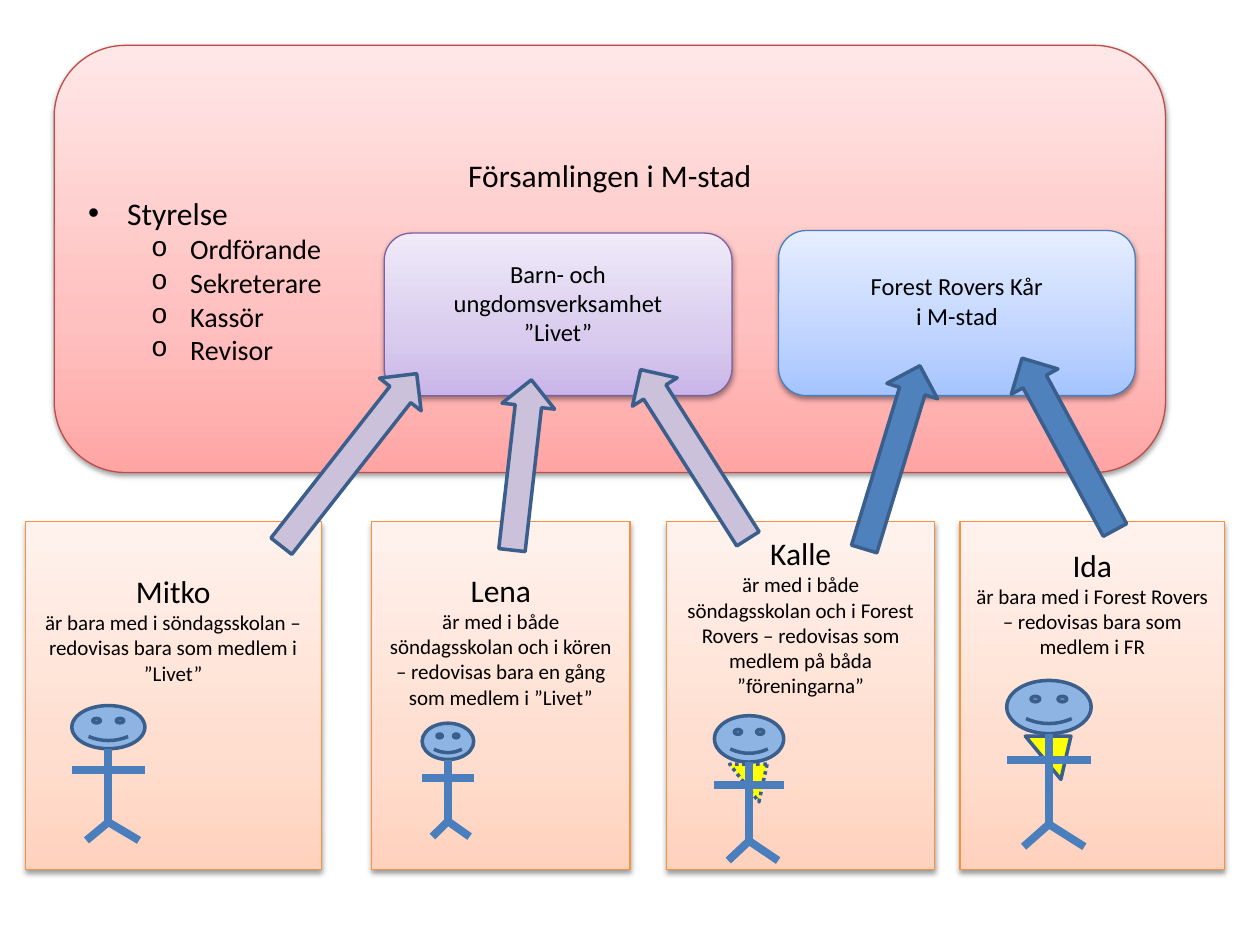
import copy
import pptx
import pptx.util
from lxml import etree
from pptx.dml.color import RGBColor
from pptx.enum.dml import MSO_LINE
from pptx.enum.shapes import MSO_CONNECTOR, MSO_SHAPE
from pptx.enum.text import MSO_ANCHOR, MSO_AUTO_SIZE, PP_ALIGN
from pptx.oxml.ns import qn

prs = pptx.Presentation()
prs.slide_width = pptx.util.Inches(10)
prs.slide_height = pptx.util.Inches(7.5)
U = prs.slide_width // 10  # the grid has 10 columns and 7.5 rows
s = prs.slides.add_slide(prs.slide_layouts[1])


def style(shape, line, width, fill=None):
    """Colour a shape or connector; three fill colours give a gradient with a shadow."""
    shape.line.color.rgb = RGBColor.from_string(line)
    shape.line.width = pptx.util.Pt(width)
    if fill is None:
        etree.SubElement(shape.element.spPr, qn("a:effectLst"))
        return
    shape.shadow.inherit = False
    if isinstance(fill, str):
        shape.fill.solid()
        shape.fill.fore_color.rgb = RGBColor.from_string(fill)
        return
    shape.fill.gradient()
    shape.fill.gradient_angle = 90
    stops = shape.element.spPr.find(".//" + qn("a:gsLst"))
    stops.insert(1, copy.deepcopy(stops[0]))
    for stop, position, color in zip(shape.fill.gradient_stops, (0, 0.35, 1), fill):
        stop.position = position
        stop.color.rgb = RGBColor.from_string(color)
    effects = shape.element.spPr.find(qn("a:effectLst"))
    shadow = etree.SubElement(effects, qn("a:outerShdw"), blurRad="40000", dist="20000",
                              dir="5400000", rotWithShape="0")
    black = etree.SubElement(shadow, qn("a:srgbClr"), val="000000")
    etree.SubElement(black, qn("a:alpha"), val="38000")


def write(p, text, size=18, align=PP_ALIGN.CENTER, color="000000"):
    p.alignment = align
    p.space_before = pptx.util.Pt(0)
    for i, line in enumerate(text.split("\n")):
        if i:
            p.add_line_break()
        r = p.add_run()
        r.text = line
        r.font.name = "Calibri"
        r.font.size = pptx.util.Pt(size)
        r.font.color.rgb = RGBColor.from_string(color)


# Congregation panel, behind its title and list
panel = s.shapes.add_shape(MSO_SHAPE.ROUNDED_RECTANGLE, 0.43 * U, 0.36 * U, 8.82 * U, 3.39 * U)
style(panel, "BF4C48", 0.75, ("FFA6A5", "FFC0BF", "FFE7E7"))
s.shapes.element.insert(2, panel.element)

title, body = s.placeholders
for holder, place in ((title, (0.43, 1.24, 8.82, 0.3)), (body, (0.7, 1.54, 2.3, 1.4))):
    holder.left, holder.top, holder.width, holder.height = (int(v * U) for v in place)
    tf = holder.text_frame
    tf.auto_size = MSO_AUTO_SIZE.NONE
    tf.vertical_anchor = MSO_ANCHOR.TOP
    tf.margin_left = tf.margin_right = tf.margin_top = tf.margin_bottom = 0
write(title.text_frame.paragraphs[0], "Församlingen i M-stad")

for i, role in enumerate(("Styrelse", "Ordförande", "Sekreterare", "Kassör", "Revisor")):
    p = body.text_frame.add_paragraph() if i else body.text_frame.paragraphs[0]
    level, indent, size, font, bullet = (
        (1, 0.81, 16, "Courier New", "o") if i else (0, 0.31, 18, "Arial", "•"))
    p.level = level
    write(p, role, size, PP_ALIGN.LEFT)
    pPr = p._p.get_or_add_pPr()
    pPr.set("marL", str(int(indent * U)))
    pPr.set("indent", str(int(-0.31 * U)))
    etree.SubElement(pPr, qn("a:buFont"), typeface=font)
    etree.SubElement(pPr, qn("a:buChar"), char=bullet)

# Member cards and group boxes: shape, place, top margin, line, gradient, heading, text, text size
RECT, ROUND = MSO_SHAPE.RECTANGLE, MSO_SHAPE.ROUNDED_RECTANGLE
PEACH = ("FFD2BD", "FFDED0", "FFF2ED")
boxes = [
    (RECT, (0.2, 4.14, 2.35, 2.76), 0.4, "F69240", PEACH, "Mitko\n",
     "är bara med i söndagsskolan – redovisas bara som medlem i ”Livet”", 12),
    (RECT, (2.95, 4.14, 2.05, 2.76), 0.39, "F69240", PEACH, "Lena\n",
     "är med i både söndagsskolan och i kören – redovisas bara en gång som medlem i ”Livet”", 12),
    (RECT, (5.29, 4.14, 2.13, 2.76), 0.1, "F69240", PEACH, "Kalle\n",
     "är med i både söndagsskolan och i Forest Rovers – redovisas som medlem på båda "
     "”föreningarna”", 12),
    (RECT, (7.62, 4.14, 2.1, 2.76), 0.19, "F69240", PEACH, "Ida\n",
     "är bara med i Forest Rovers – redovisas bara som medlem i FR", 12),
    (ROUND, (3.05, 1.85, 2.76, 1.29), 0.14, "7D60A0", ("C9B5E8", "D8CBEE", "F0EAF9"), "",
     "Barn- och ungdomsverksamhet\n”Livet”", 14),
    (ROUND, (6.18, 1.83, 2.83, 1.31), 0.26, "4B7EBC", ("A4C4FF", "BFD4FF", "E6EEFF"), "",
     "Forest Rovers Kår\ni M-stad", 14),
]
for kind, place, margin, line, fill, heading, text, size in boxes:
    box = s.shapes.add_shape(kind, *(int(v * U) for v in place))
    style(box, line, 0.75, fill)
    tf = box.text_frame
    tf.word_wrap = True
    tf.vertical_anchor = MSO_ANCHOR.TOP
    tf.margin_top = int(margin * U)
    p = tf.paragraphs[0]
    if heading:
        write(p, heading)
    write(p, text, size)

# Stick figures: left, top, width, height, scarf outline
figures = [
    (0.57, 5.6, 0.58, 1.07, None),
    (3.35, 5.74, 0.41, 0.9, None),
    (5.67, 5.68, 0.55, 1.15, MSO_LINE.ROUND_DOT),
    (7.99, 5.4, 0.67, 1.32, MSO_LINE.SOLID),
]
# Limbs as shares of a figure's width and height: spine, left leg, right leg, arms
limbs = [(0.5, 0.32, 0.5, 0.865), (0.5, 0.865, 0.2, 1), (0.5, 0.865, 0.92, 1), (1, 0.48, 0, 0.48)]
for x, y, w, h, scarf_line in figures:
    if scarf_line:
        scarf = s.shapes.add_shape(MSO_SHAPE.ISOSCELES_TRIANGLE, int((x + 0.22 * w) * U),
                                   int((y + 0.335 * h) * U), int(0.54 * w * U), int(0.26 * h * U))
        scarf.rotation = 180
        scarf.adjustments[0] = 0.22
        style(scarf, "3A5F8C", 2, "FFFF00")
        scarf.line.dash_style = scarf_line
    head = s.shapes.add_shape(MSO_SHAPE.SMILEY_FACE, int(x * U), int(y * U),
                              int(w * U), int(0.32 * h * U))
    style(head, "3A5F8C", 2, "8EB4E3")
    for x1, y1, x2, y2 in limbs:
        limb = s.shapes.add_connector(
            MSO_CONNECTOR.STRAIGHT, int((x + x1 * w) * U), int((y + y1 * h) * U),
            int((x + x2 * w) * U), int((y + y2 * h) * U))
        style(limb, "4B7EBC", 4.5)

# Membership arrows: left, top, height, rotation, fill
LILAC, BLUE = "CCC1DA", "4F81BD"
arrows = [
    (2.56, 2.78, 1.74, 218.1, LILAC),
    (5.3, 2.81, 1.59, 147.6, LILAC),
    (6.87, 2.87, 1.52, 196.9, BLUE),
    (8.27, 2.75, 1.55, 151.6, BLUE),
    (3.93, 3.01, 1.36, 186.5, LILAC),
]
for x, y, h, rotation, fill in arrows:
    arrow = s.shapes.add_shape(MSO_SHAPE.DOWN_ARROW, int(x * U), int(y * U),
                               int(0.42 * U), int(h * U))
    arrow.rotation = rotation
    style(arrow, "3A5F8C", 2, fill)

prs.save("out.pptx")
